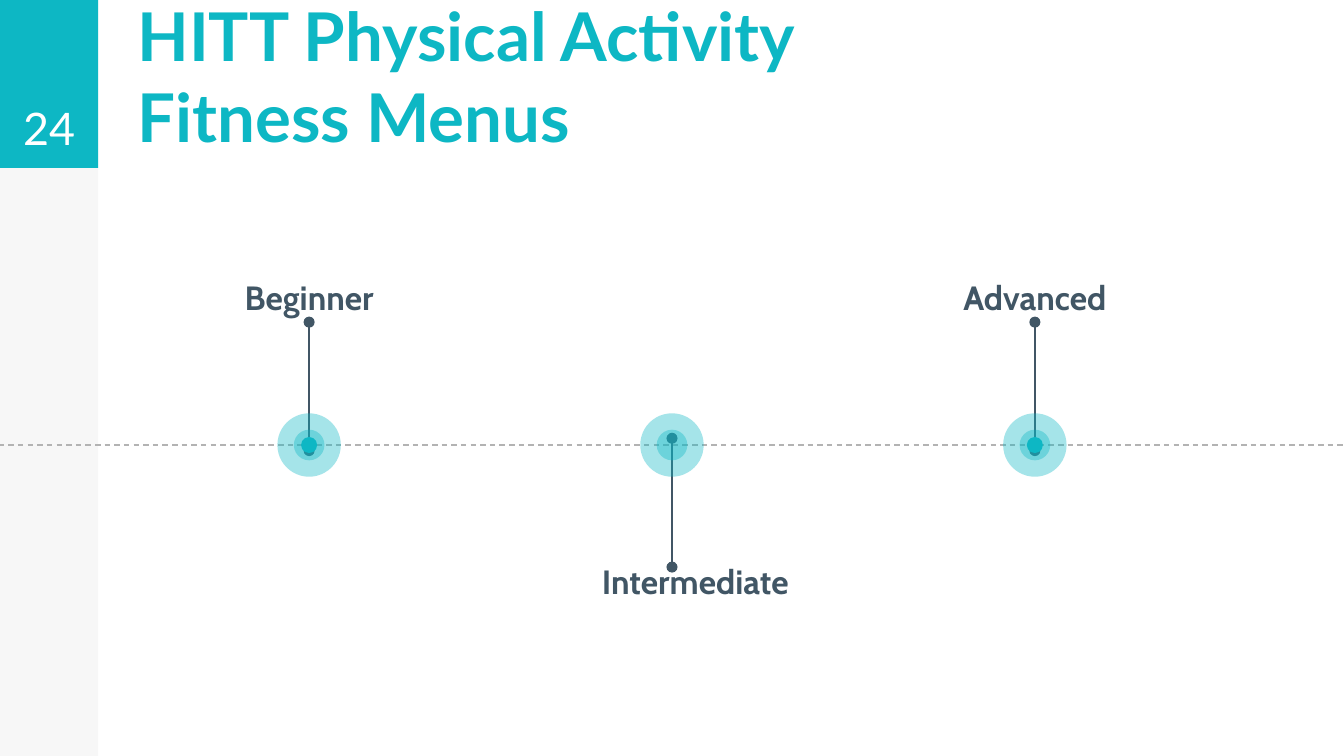
from lxml import etree
from pptx import Presentation
from pptx.dml.color import RGBColor
from pptx.enum.dml import MSO_LINE
from pptx.enum.shapes import MSO_CONNECTOR, MSO_SHAPE
from pptx.enum.text import MSO_ANCHOR, PP_ALIGN
from pptx.oxml.ns import qn
from pptx.util import Pt

TEAL = RGBColor(0x0D, 0xB7, 0xC4)
SLATE = RGBColor(0x41, 0x56, 0x65)
GRAY = RGBColor(0xB3, 0xB3, 0xB3)
BLACK = RGBColor(0, 0, 0)
WHITE = RGBColor(0xFF, 0xFF, 0xFF)
RECTANGLE, OVAL = MSO_SHAPE.RECTANGLE, MSO_SHAPE.OVAL
STRAIGHT, DASH = MSO_CONNECTOR.STRAIGHT, MSO_LINE.DASH
TOP, BOTTOM = MSO_ANCHOR.TOP, MSO_ANCHOR.BOTTOM
LEFT, CENTER = PP_ALIGN.LEFT, PP_ALIGN.CENTER

TITLE_FONT = {"name": "Lato", "size": Pt(36), "bold": True}
NUMBER_FONT = {"name": "Lato", "size": Pt(24), "bold": False}
LABEL_FONT = {"name": "Cabin", "size": Pt(18), "bold": True}
INSETS = {"margin_left": Pt(7.2), "margin_right": Pt(7.2),
          "margin_top": Pt(7.2), "margin_bottom": Pt(7.2), "word_wrap": True}

prs = Presentation()
prs.slide_width, prs.slide_height = Pt(720), Pt(405)
slide = prs.slides.add_slide(prs.slide_layouts[6])


def add_filled(parent, kind, box, color, opacity=100):
    shape = parent.add_shape(kind, *[Pt(v) for v in box])
    shape.shadow.inherit = False
    shape.line.fill.background()
    shape.fill.solid()
    shape.fill.fore_color.rgb = color
    if opacity < 100:
        tint = shape._element.spPr.find(qn("a:solidFill"))[0]
        etree.SubElement(tint, qn("a:alpha"), val=str(opacity * 1000))


def add_text(text, box, font, color, anchor, align):
    frame = slide.shapes.add_textbox(*[Pt(v) for v in box]).text_frame
    for name, value in {**INSETS, "vertical_anchor": anchor}.items():
        setattr(frame, name, value)
    paragraph = frame.paragraphs[0]
    paragraph.alignment = align
    run = paragraph.add_run()
    run.text = text
    for name, value in font.items():
        setattr(run.font, name, value)
    run.font.color.rgb = color


number_box = (0, 0, 52.6, 90)
add_filled(slide.shapes, RECTANGLE, (0, 0, 52.6, 405), BLACK, 3)
add_filled(slide.shapes, RECTANGLE, number_box, TEAL)
add_text("HITT Physical Activity Fitness Menus", (66.5, 0.5, 471, 90),
         TITLE_FONT, TEAL, BOTTOM, LEFT)
add_text("24", number_box, NUMBER_FONT, WHITE, BOTTOM, CENTER)

axis_y = 238.4
levels = [
    ("Beginner", 165.6, (241.4, 172.6), (116.6, 141.1, 98), True),
    ("Intermediate", 360, (234.8, 303.8), (311, 293.5, 123), False),
    ("Advanced", 554.4, (241.4, 172.6), (505.4, 141.1, 98), True),
]

lines = [(-0.7, axis_y, 720.7, axis_y, GRAY, False)]
lines += [(x, start, x, end, SLATE, True) for _, x, (start, end), _, _ in levels]
for x1, y1, x2, y2, color, is_stem in lines:
    connector = slide.shapes.add_connector(STRAIGHT, Pt(x1), Pt(y1), Pt(x2), Pt(y2))
    connector.line.color.rgb = color
    connector.line.width = Pt(0.75)
    if is_stem:
        outline = connector.line._get_or_add_ln()
        for end in ("a:headEnd", "a:tailEnd"):
            etree.SubElement(outline, qn(end), type="oval")
    else:
        connector.line.dash_style = DASH
    etree.SubElement(connector._element.spPr, qn("a:effectLst"))

for name, _, _, (left, top, width), _ in levels:
    add_text(name, (left, top, width, 32.4), LABEL_FONT, SLATE, TOP, CENTER)

for _, x, _, _, has_core in levels:
    marker = slide.shapes.add_group_shape()
    rings = [(34, 37), (16.4, 37)] + [(8.6, 100)] * has_core
    for size, opacity in rings:
        add_filled(marker.shapes, OVAL, (x - size / 2, axis_y - size / 2, size, size),
                   TEAL, opacity)

prs.save("out.pptx")
